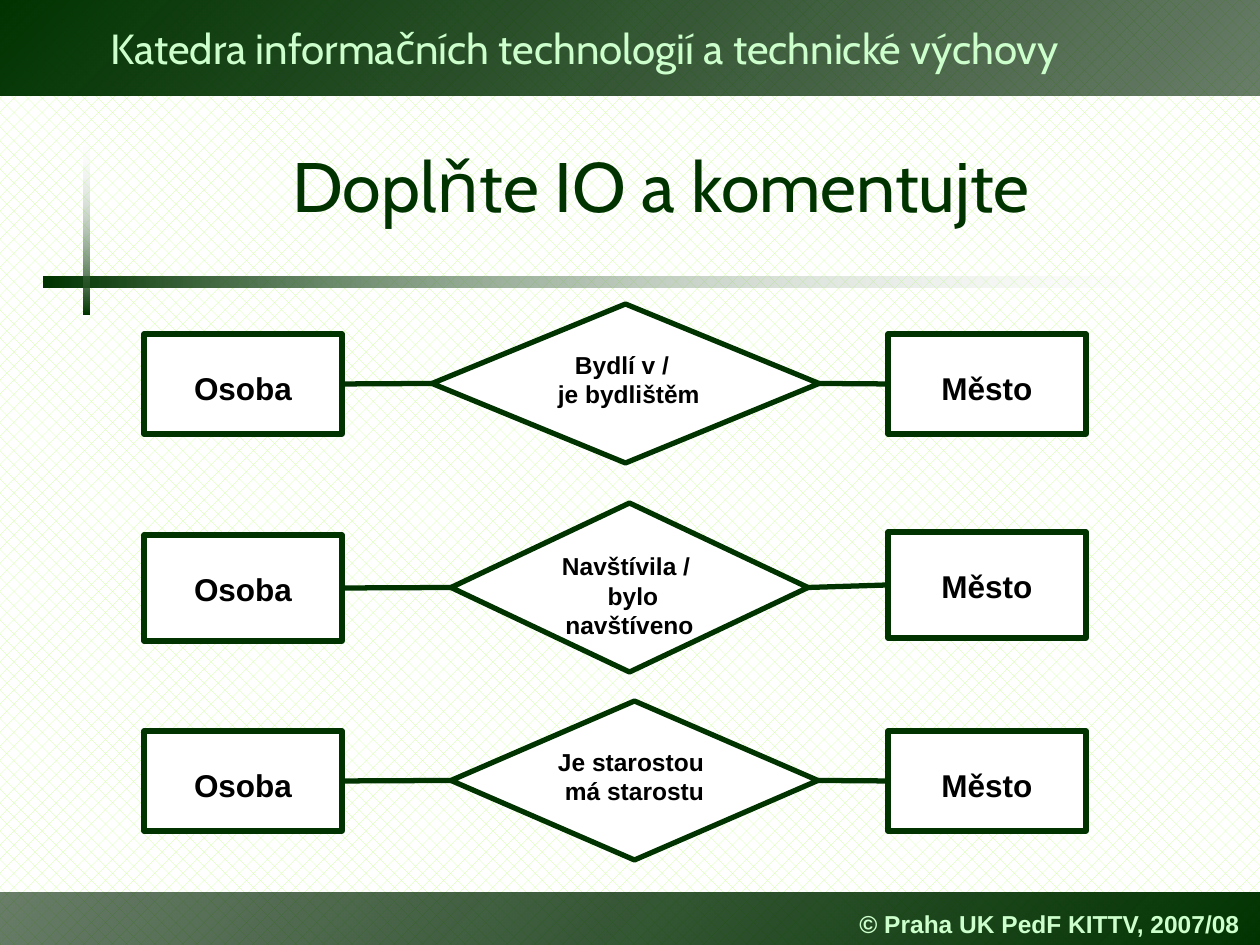
import pptx
import pptx.util
from lxml import etree
from pptx.dml.color import RGBColor
from pptx.enum.dml import MSO_PATTERN
from pptx.enum.shapes import MSO_CONNECTOR, MSO_SHAPE
from pptx.enum.text import MSO_ANCHOR, MSO_AUTO_SIZE, PP_ALIGN
from pptx.oxml.ns import qn

PX = 914400 / 126

DARK = RGBColor(0x00, 0x33, 0x00)
DEEP = RGBColor(0x00, 0x24, 0x00)
PALE = RGBColor(0xCC, 0xFF, 0xCC)
LIME = RGBColor(0xCC, 0xFF, 0x99)
WHITE = RGBColor(0xFF, 0xFF, 0xFF)
BLACK = RGBColor(0x00, 0x00, 0x00)

PERSON_X, CITY_X, ENTITY_W = 144, 888, 198
# Person top, city top, entity height, relation box, relation wording
ROWS = [
    (334, 334, 100, (432, 304, 387, 159), "Bydlí v / \v je bydlištěm"),
    (535, 532, 106, (451, 503, 357, 169), "Navštívila / \v bylo navštíveno"),
    (731, 731, 100, (451, 701, 367, 159), "Je starostou \vmá starostu"),
]


def px(*lengths):
    return [pptx.util.Emu(round(n * PX)) for n in lengths]


def style_text(tf, size, color, font="Arial", bold=False, align=PP_ALIGN.LEFT):
    for p in tf.paragraphs:
        p.alignment = align
        for r in p.runs:
            r.font.size = pptx.util.Pt(size)
            r.font.name = font
            r.font.bold = bold
            r.font.color.rgb = color


def add_gradient_bar(s, box, stops, angle=0, rotation=0):
    """Each stop is a colour and its opacity in percent."""
    sp = s.shapes.add_shape(MSO_SHAPE.RECTANGLE, *px(*box))
    sp.shadow.inherit = False
    sp.line.fill.background()
    sp.rotation = rotation
    sp.fill.gradient()
    sp.fill.gradient_angle = 360 - angle
    for stop, (color, opacity) in zip(sp.fill.gradient_stops, stops):
        stop.color.rgb = color
    for clr, (color, opacity) in zip(sp._element.spPr.iter(qn("a:srgbClr")), stops):
        if opacity < 100:
            etree.SubElement(clr, qn("a:alpha"), val=str(opacity * 1000))


def add_label(s, box, text, size, font, bold, anchor):
    tf = s.shapes.add_textbox(*px(*box)).text_frame
    tf.word_wrap = False
    tf.auto_size = MSO_AUTO_SIZE.SHAPE_TO_FIT_TEXT
    tf.vertical_anchor = anchor
    tf.text = text
    style_text(tf, size, PALE, font, bold)
    return tf


def add_text_shadow(r):
    effects = etree.Element(qn("a:effectLst"))
    shadow = etree.SubElement(effects, qn("a:outerShdw"), dist="35921", dir="2700000")
    clr = etree.SubElement(shadow, qn("a:srgbClr"), val="000000")
    etree.SubElement(clr, qn("a:alpha"), val="50000")
    r.font._element.find(qn("a:solidFill")).addnext(effects)


def add_node(s, shape, box, text, size, top=6):
    sp = s.shapes.add_shape(shape, *px(*box))
    sp.shadow.inherit = False
    sp.fill.solid()
    sp.fill.fore_color.rgb = WHITE
    sp.line.color.rgb = DARK
    sp.line.width = pptx.util.Pt(3)
    tf = sp.text_frame
    tf.word_wrap = True
    tf.vertical_anchor = MSO_ANCHOR.TOP
    tf.margin_top = px(top)[0]
    tf.text = text
    # A vertical tab becomes a line break only in paragraph text
    tf.paragraphs[0].text = text
    style_text(tf, size, BLACK, bold=True, align=PP_ALIGN.CENTER)
    return sp


def join(s, left, right):
    c = s.shapes.add_connector(MSO_CONNECTOR.STRAIGHT, 0, 0, 0, 0)
    c.begin_connect(left, 3)
    c.end_connect(right, 1)
    c.line.color.rgb = DARK
    c.line.width = pptx.util.Pt(3)
    etree.SubElement(c._element.spPr, qn("a:effectLst"))


def add_relation_row(s, person_y, city_y, height, diamond, text):
    person = add_node(s, MSO_SHAPE.RECTANGLE, (PERSON_X, person_y, ENTITY_W, height),
                      "Osoba", 18, top=35)
    relation = add_node(s, MSO_SHAPE.DIAMOND, diamond, text, 14)
    city = add_node(s, MSO_SHAPE.RECTANGLE, (CITY_X, city_y, ENTITY_W, height),
                    "Město", 18, top=35)
    join(s, person, relation)
    join(s, relation, city)


def set_title(s, text):
    sp = s.shapes.title
    sp.left, sp.top, sp.width, sp.height = px(94, 106, 1134, 157)
    tf = sp.text_frame
    tf.auto_size = MSO_AUTO_SIZE.NONE
    tf.vertical_anchor = MSO_ANCHOR.MIDDLE
    tf.text = text
    style_text(tf, 40, DARK, "Cabin", align=PP_ALIGN.CENTER)


def main():
    prs = pptx.Presentation()
    prs.slide_width, prs.slide_height = px(1260, 945)
    s = prs.slides.add_slide(prs.slide_layouts[5])

    # Background
    fill = s.background.fill
    fill.patterned()
    fill.pattern = MSO_PATTERN.PERCENT_25
    fill.fore_color.rgb = LIME
    fill.back_color.rgb = WHITE

    # Footer and header bands
    band = [(DEEP, 59), (DARK, 100)]
    add_gradient_bar(s, (0, 893, 1260, 55), band, angle=45)
    add_gradient_bar(s, (0, 0, 1260, 96), band, angle=45, rotation=180)
    tf = add_label(s, (98, 16, 1017, 63),
                   "Katedra informačních technologií a technické výchovy",
                   24, "Cabin", False, MSO_ANCHOR.TOP)
    add_text_shadow(tf.paragraphs[0].runs[0])
    add_label(s, (847, 903, 413, 42), "© Praha UK PedF KITTV, 2007/08",
              14, "Arial", True, MSO_ANCHOR.MIDDLE)

    # Crossed rules beside the title
    fade = [(DARK, 100), (WHITE, 0)]
    add_gradient_bar(s, (44, 277, 1196, 11), fade)
    add_gradient_bar(s, (-3, 221, 180, 6), fade, rotation=270)
    set_title(s, "Doplňte IO a komentujte")

    # Entity relations
    for row in ROWS:
        add_relation_row(s, *row)

    prs.save("out.pptx")


if __name__ == "__main__":
    main()
